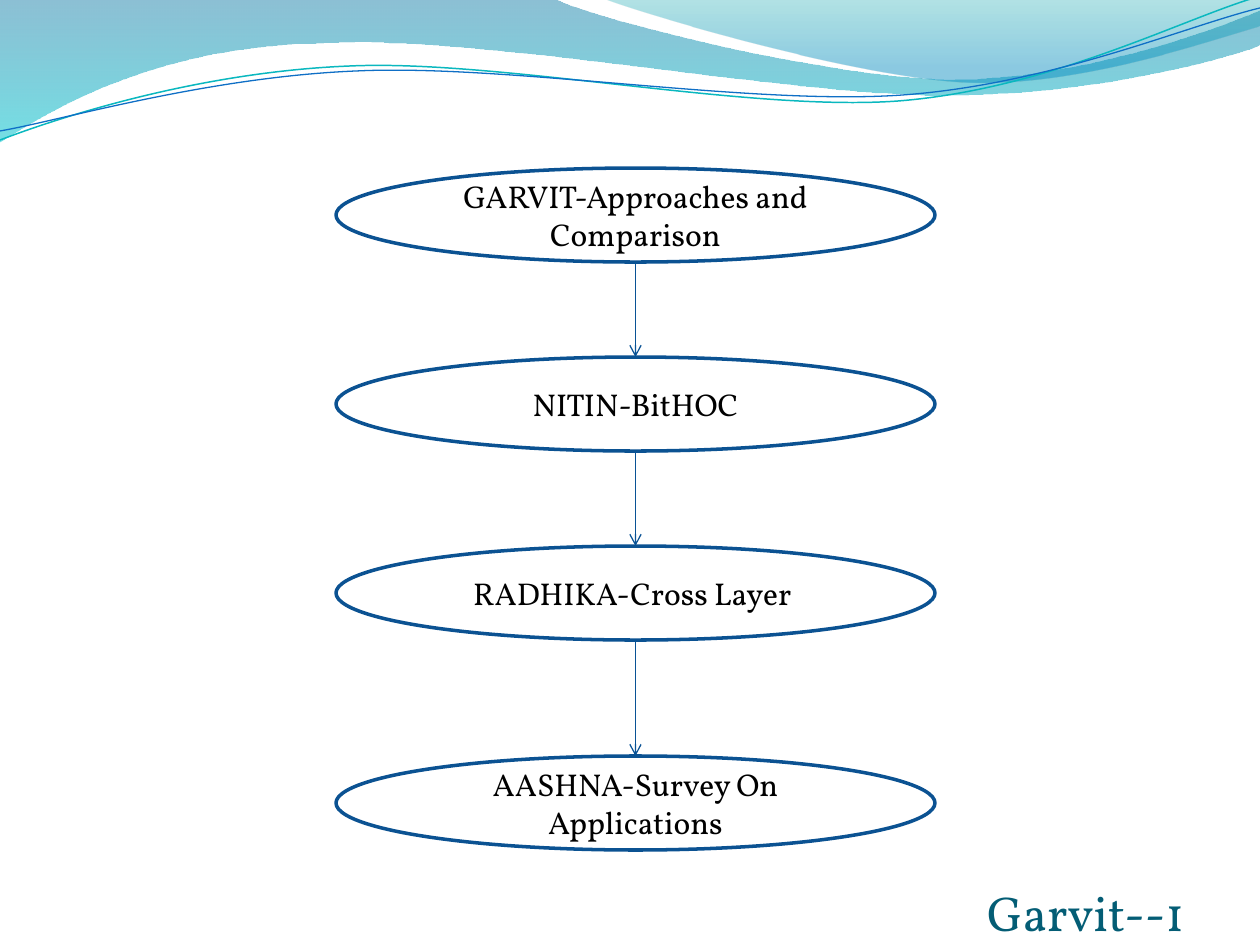
from pptx import Presentation
from pptx.dml.color import RGBColor
from pptx.enum.shapes import MSO_CONNECTOR as Conn, MSO_SHAPE as Kind
from pptx.enum.text import MSO_ANCHOR as Anchor, PP_ALIGN as Align
from pptx.oxml.ns import qn
from pptx.util import Pt
from lxml.etree import SubElement as Sub

PX = 914400 / 126
FACE = "Vollkorn"
BLACK = RGBColor(0x00, 0x00, 0x00)
TEAL = RGBColor(0x04, 0x5D, 0x75)
NAVY = RGBColor(0x0B, 0x52, 0x92)
ARROW = RGBColor(0x09, 0x52, 0x95)
CYAN = RGBColor(0x0A, 0xB8, 0xBF)
BLUE = RGBColor(0x0F, 0x6F, 0xC6)
DEEP = RGBColor(0x00, 0x74, 0xA1)
AQUA = RGBColor(0x00, 0xC6, 0xCF)
MINT = RGBColor(0x00, 0xA1, 0xA9)
SKY = RGBColor(0x00, 0x8B, 0xBF)

TITLE = "Garvit--1"
STEPS = [
    ("GARVIT-Approaches and Comparison", 168),
    ("NITIN-BitHOC", 357),
    ("RADHIKA-Cross Layer ", 546),
    ("AASHNA-Survey On Applications", 756),
]
LEFT, WIDE, HIGH = 336, 599, 94

WAVES = [
    ((0, 0),
     [[(554, -1)],
      [(600, 21), (837, 79), (955, 79)],
      [(1075, 79), (1207, 33), (1260, 11)],
      [(1261, 45)],
      [(1239, 55), (1096, 96), (940, 95)],
      [(784, 95), (481, 35), (324, 43)],
      [(163, 45), (58, 105), (-1, 142)],
      [(0, 0)]],
     [(0, DEEP, 45), (1, AQUA, 55)]),
    ((604, -1),
     [[(641, 14), (859, 78), (969, 82)],
      [(1079, 86), (1211, 40), (1260, 26)],
      [(1260, 0)],
      [(604, -1)]],
     [(0, MINT, 30), (0.8, SKY, 45)]),
]
CURVES = [
    ((0, 140),
     [[(60, 117), (199, 72), (349, 66)],
      [(498, 59), (747, 112), (898, 101)],
      [(1050, 89), (1182, 19), (1257, -3)]],
     CYAN, 0.85),
    ((0, 131),
     [[(59, 121), (207, 77), (357, 71)],
      [(508, 64), (752, 106), (903, 95)],
      [(1053, 84), (1186, 26), (1260, 8)]],
     BLUE, 0.75),
]


def px(n):
    return round(n * PX)


def style(obj, **vals):
    for name, val in vals.items():
        setattr(obj, name, val)


def stroke(obj, hue, size):
    obj.line.color.rgb = hue
    obj.line.width = Pt(size)


def trace(start, parts, close):
    pen = shapes.build_freeform(px(start[0]), px(start[1]), scale=1)
    ends = [(px(x), px(y)) for *_, (x, y) in parts]
    pen.add_line_segments(ends, close=close)
    shape = pen.convert_to_shape()
    shape.shadow.inherit = False
    legs = list(shape._element.spPr.iter(qn("a:lnTo")))
    for leg, part in zip(legs, parts):
        if len(part) == 3:
            leg.tag = qn("a:cubicBezTo")
            for node in list(leg):
                leg.remove(node)
            for x, y in part:
                Sub(leg, qn("a:pt"), x=str(px(x) - shape.left),
                    y=str(px(y) - shape.top))
    return shape


def write(shape, text, size, hue, align):
    para = shape.text_frame.paragraphs[0]
    para.alignment = align
    run = para.add_run()
    run.text = text
    style(run.font, name=FACE, size=Pt(size))
    run.font.color.rgb = hue


deck = Presentation()
style(deck, slide_width=px(1260), slide_height=px(945))
shapes = deck.slides.add_slide(deck.slide_layouts[6]).shapes

for start, parts, stops in WAVES:
    wave = trace(start, parts, True)
    wave.line.fill.background()
    wave.fill.gradient()
    wave.fill.gradient_angle = 270
    for stop, (spot, hue, _) in zip(wave.fill.gradient_stops, stops):
        stop.position = spot
        stop.color.rgb = hue
    tags = wave._element.spPr.iter(qn("a:srgbClr"))
    for tag, (_, _, alpha) in zip(list(tags), stops):
        Sub(tag, qn("a:alpha"), val=str(alpha * 1000))

for start, parts, hue, size in CURVES:
    curve = trace(start, parts, False)
    curve.fill.background()
    stroke(curve, hue, size)

title = shapes.add_textbox(px(987), px(882), px(231), px(59))
style(title.text_frame, word_wrap=True, vertical_anchor=Anchor.BOTTOM,
      margin_left=0, margin_right=0, margin_top=0, margin_bottom=0)
write(title, TITLE, 28, TEAL, Align.LEFT)

for text, top in STEPS:
    oval = shapes.add_shape(Kind.OVAL, px(LEFT), px(top), px(WIDE), px(HIGH))
    oval.shadow.inherit = False
    oval.fill.background()
    stroke(oval, NAVY, 2)
    style(oval.text_frame, word_wrap=True, vertical_anchor=Anchor.MIDDLE)
    write(oval, text, 18, BLACK, Align.CENTER)

mid = px(LEFT + WIDE / 2)
for (_, top), (_, low) in zip(STEPS, STEPS[1:]):
    link = shapes.add_connector(Conn.STRAIGHT, mid, px(top + HIGH), mid, px(low))
    stroke(link, ARROW, 0.75)
    Sub(link.line._get_or_add_ln(), qn("a:tailEnd"), type="arrow")
    Sub(link._element.spPr, qn("a:effectLst"))

deck.save("out.pptx")
